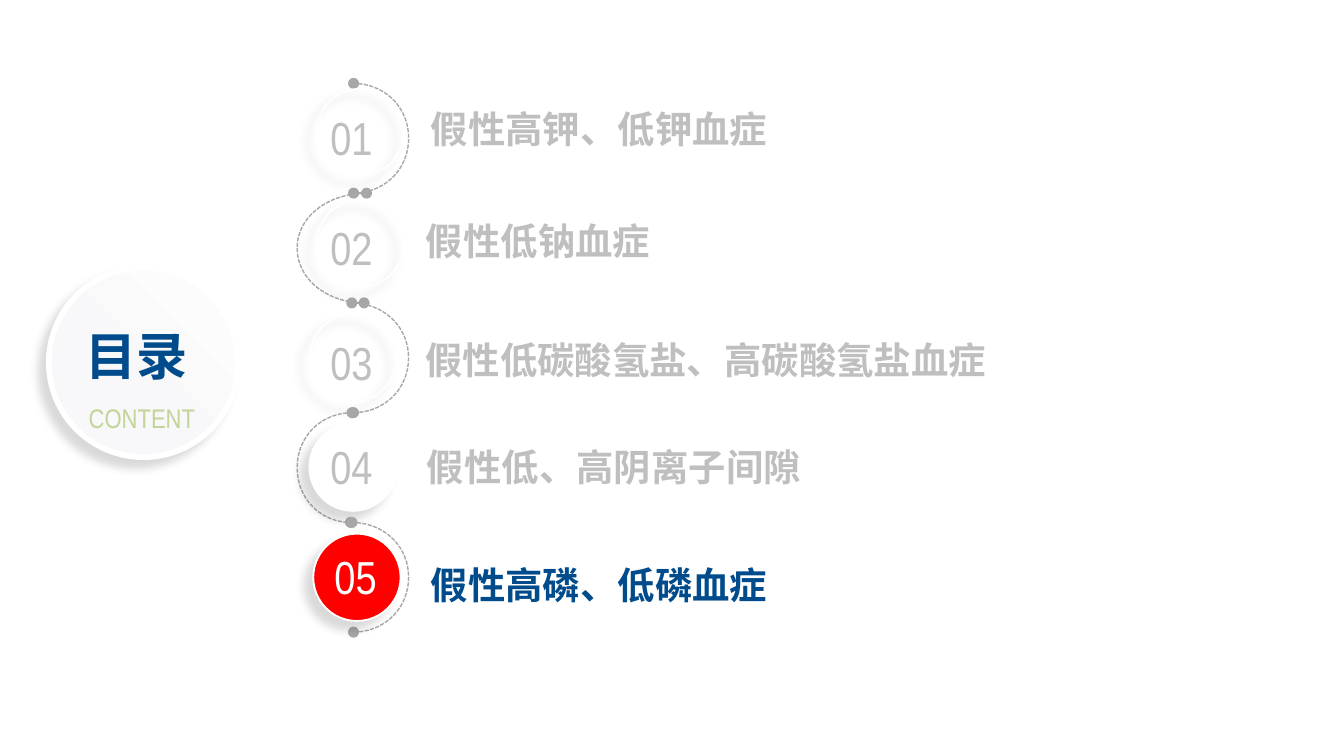
import lxml.etree
import pptx
import pptx.dml.color
import pptx.enum.dml
import pptx.enum.shapes
import pptx.enum.text
import pptx.oxml.ns
import pptx.util

Pt = pptx.util.Pt
RGBColor = pptx.dml.color.RGBColor
ANCHOR = pptx.enum.text.MSO_ANCHOR
qn = pptx.oxml.ns.qn

WHITE = RGBColor(0xFF, 0xFF, 0xFF)
PALE = RGBColor(0xF8, 0xF7, 0xF9)
BLUE = RGBColor(0x00, 0x4B, 0x8C)
GREEN = RGBColor(0xC1, 0xD5, 0x99)
GREY = RGBColor(0xBF, 0xBF, 0xBF)
TRAIL = RGBColor(0xA7, 0xA7, 0xA7)
RED = RGBColor(0xFF, 0x00, 0x00)

CJK = "Noto Sans CJK SC"
NARROW = "Arial Narrow"
INSETS = (2.6, 3.6)

CHAPTERS = [
    dict(title="假性高钾、低钾血症", title_box=(228.2, 53.3, 187.2, 31.7), wrap=False,
         disc=(169.4, 47.6), number_box=(171.4, 52.9, 33.8, 41), ends=(189.4, 189.4)),
    dict(title="假性低钠血症", title_box=(228.2, 116.6, 316.1, 24.5), insets=(0, 0),
         anchor=ANCHOR.MIDDLE, disc=(169.4, 107.3), number_box=(169.9, 111.6, 36.7, 41),
         ends=(196.4, 195.1)),
    dict(title="假性低碳酸氢盐、高碳酸氢盐血症", title_box=(225.2, 164.9, 308.2, 39.6),
         wrap=False, spacing=1.5, disc=(165.6, 168.5), number_box=(169.2, 173.5, 38.2, 41),
         ends=(188.5, 189.4)),
    dict(title="假性低、高阴离子间隙", title_box=(226.1, 222.5, 329.8, 39.6), spacing=1.5,
         disc=(165.7, 226.9), disc_fill=WHITE, number_box=(169.9, 229.4, 36.7, 41),
         ends=(188.6, 187.8)),
    dict(title="假性高磷、低磷血症", title_box=(228.2, 285.4, 329.8, 39.6), spacing=1.5,
         font="Arial", title_color=BLUE, disc=(167.8, 285.9), disc_fill=RED,
         number_color=WHITE, number_box=(171.4, 288.2, 38.2, 41), ends=(188.6, 189.4)),
]
TRAIL_TOP = 44.7
TRAIL_STEP = 58.8
TRAIL_LEFT, TRAIL_RIGHT = 159.2, 218.9
DISC_SIZE = 46.8
BULGE = 0.55

deck = pptx.Presentation()
deck.slide_width, deck.slide_height = Pt(720), Pt(405)
slide = deck.slides.add_slide(deck.slide_layouts[6])


def add_text(text, box, size, color, font, bold=False, align=None, anchor=ANCHOR.TOP,
             insets=INSETS, wrap=True, grow=True, spacing=None, before=None, raised=None):
    frame = slide.shapes.add_textbox(*map(Pt, box)).text_frame
    frame.word_wrap = wrap
    frame.vertical_anchor = anchor
    if grow:
        frame.auto_size = pptx.enum.text.MSO_AUTO_SIZE.SHAPE_TO_FIT_TEXT
    frame.margin_left = frame.margin_right = Pt(insets[0])
    frame.margin_top = frame.margin_bottom = Pt(insets[1])
    paragraph = frame.paragraphs[0]
    paragraph.alignment = align
    if spacing:
        paragraph.line_spacing = spacing
    if before:
        paragraph.space_before = Pt(before)
    run = paragraph.add_run()
    run.text = text
    run.font.size, run.font.bold, run.font.name = Pt(size), bold, font
    run.font.color.rgb = color
    properties = run.font._element
    lxml.etree.SubElement(properties, qn("a:ea"), typeface=font)
    if raised:
        properties.set("baseline", str(raised * 1000))


def add_disc(left, top, size, border, fill=None):
    disc = slide.shapes.add_shape(pptx.enum.shapes.MSO_SHAPE.OVAL,
                                  *map(Pt, (left, top, size, size)))
    disc.shadow.inherit = False
    if fill:
        disc.fill.solid()
        disc.fill.fore_color.rgb = fill
    else:
        disc.fill.background()
    disc.line.color.rgb = WHITE
    disc.line.width = Pt(border)
    effects = disc._element.spPr.find(qn("a:effectLst"))
    shadow = lxml.etree.SubElement(
        effects, qn("a:outerShdw"), blurRad=str(Pt(5)), dist=str(Pt(6.4)),
        dir=str(135 * 60000), algn="tr", rotWithShape="0")
    black = lxml.etree.SubElement(shadow, qn("a:srgbClr"), val="000000")
    lxml.etree.SubElement(black, qn("a:alpha"), val="15000")
    return disc


def add_trail(top, ends, outer):
    half = TRAIL_STEP / 2
    corners = [(Pt(x), Pt(y)) for x, y in
               ((ends[0], top), (outer, top + half), (ends[1], top + TRAIL_STEP))]
    builder = slide.shapes.build_freeform(*corners[0], scale=1.0)
    builder.add_line_segments(corners[1:], close=False)
    trail = builder.convert_to_shape()
    round_off(trail, corners)
    trail.shadow.inherit = False
    trail.fill.background()
    trail.line.color.rgb = TRAIL
    trail.line.width = Pt(0.75)
    trail.line.dash_style = pptx.enum.dml.MSO_LINE.SQUARE_DOT
    outline = trail._element.spPr.find(qn("a:ln"))
    for tip in ("a:headEnd", "a:tailEnd"):
        lxml.etree.SubElement(outline, qn(tip), type="oval")


def round_off(trail, corners):
    (x0, y0), (x1, y1), (x2, y2) = corners
    curves = [
        ((x0 + BULGE * (x1 - x0), y0), (x1, y1 - BULGE * (y1 - y0)), (x1, y1)),
        ((x1, y1 + BULGE * (y2 - y1)), (x2 + BULGE * (x1 - x2), y2), (x2, y2)),
    ]
    for segment, curve in zip(list(trail._element.iter(qn("a:lnTo"))), curves):
        bezier = lxml.etree.Element(qn("a:cubicBezTo"))
        for x, y in curve:
            lxml.etree.SubElement(bezier, qn("a:pt"), x=str(round(x - trail.left)),
                                  y=str(round(y - trail.top)))
        segment.getparent().replace(segment, bezier)


center = pptx.enum.text.PP_ALIGN.CENTER

contents_disc = add_disc(26.1, 143.4, 101.5, 3, WHITE)
contents_disc.fill.gradient()
contents_disc.fill.gradient_angle = 225
for stop, color, position in zip(contents_disc.fill.gradient_stops, (WHITE, PALE), (0, 0.62)):
    stop.color.rgb = color
    stop.position = position
add_text("目录", (38.7, 165.6, 69.1, 45.4), 47.2, BLUE, CJK, bold=True, align=center,
         anchor=ANCHOR.MIDDLE, wrap=False, raised=13)
add_text("CONTENT", (44, 199.4, 64.1, 33.1), 24.8, GREEN, NARROW, align=center,
         anchor=ANCHOR.MIDDLE, wrap=False, spacing=1.5, raised=15)

for index, chapter in enumerate(CHAPTERS):
    add_trail(TRAIL_TOP + index * TRAIL_STEP, chapter["ends"],
              TRAIL_LEFT if index % 2 else TRAIL_RIGHT)
    add_disc(*chapter["disc"], DISC_SIZE, 1, chapter.get("disc_fill"))
    add_text(f"{index + 1:02d}", chapter["number_box"], 24.8,
             chapter.get("number_color", GREY), NARROW, align=center,
             anchor=ANCHOR.MIDDLE, grow=False)
    add_text(chapter["title"], chapter["title_box"], 20, chapter.get("title_color", GREY),
             chapter.get("font", CJK), bold=True, anchor=chapter.get("anchor", ANCHOR.TOP),
             insets=chapter.get("insets", INSETS), wrap=chapter.get("wrap", True),
             spacing=chapter.get("spacing"), before=12)

deck.save("out.pptx")
